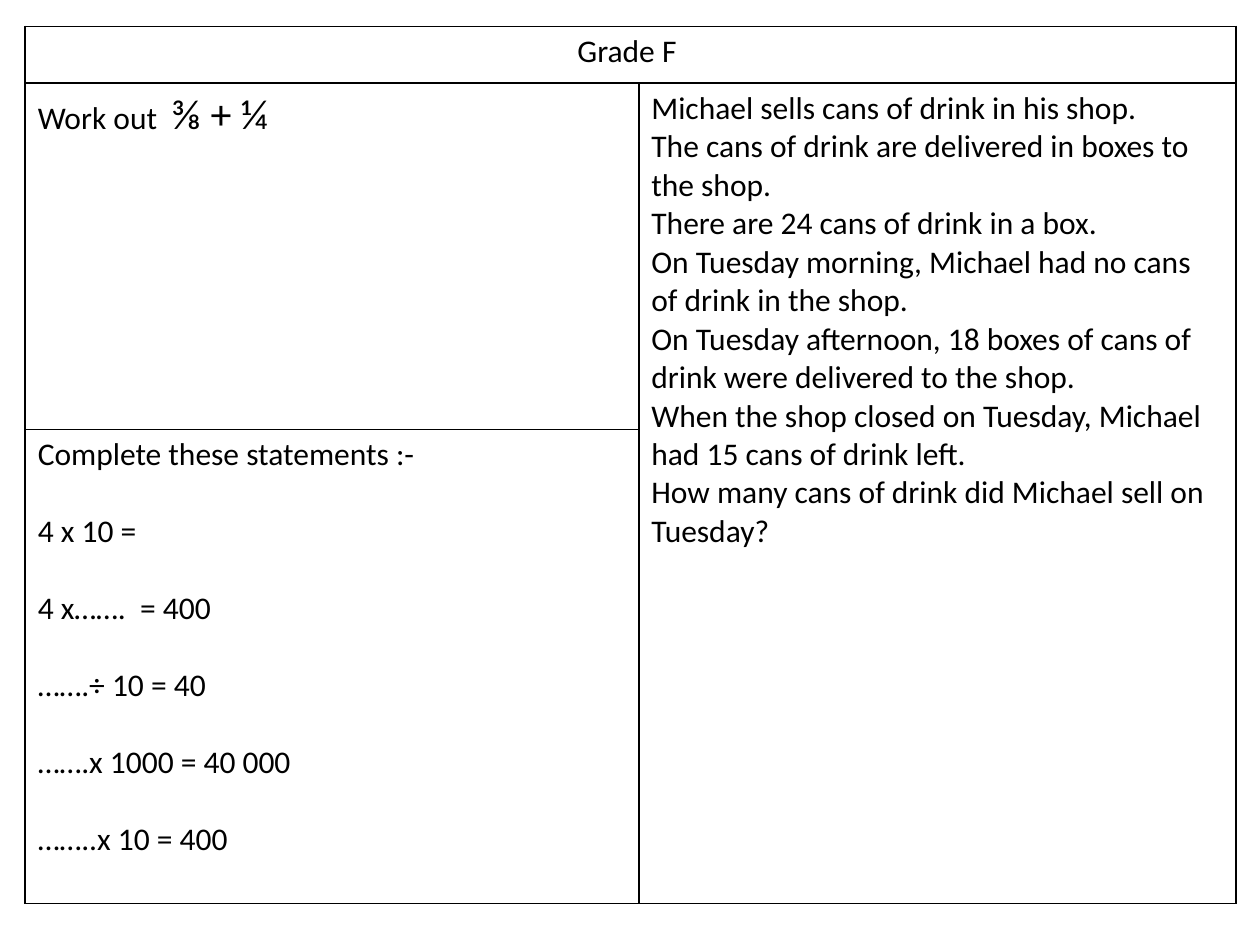
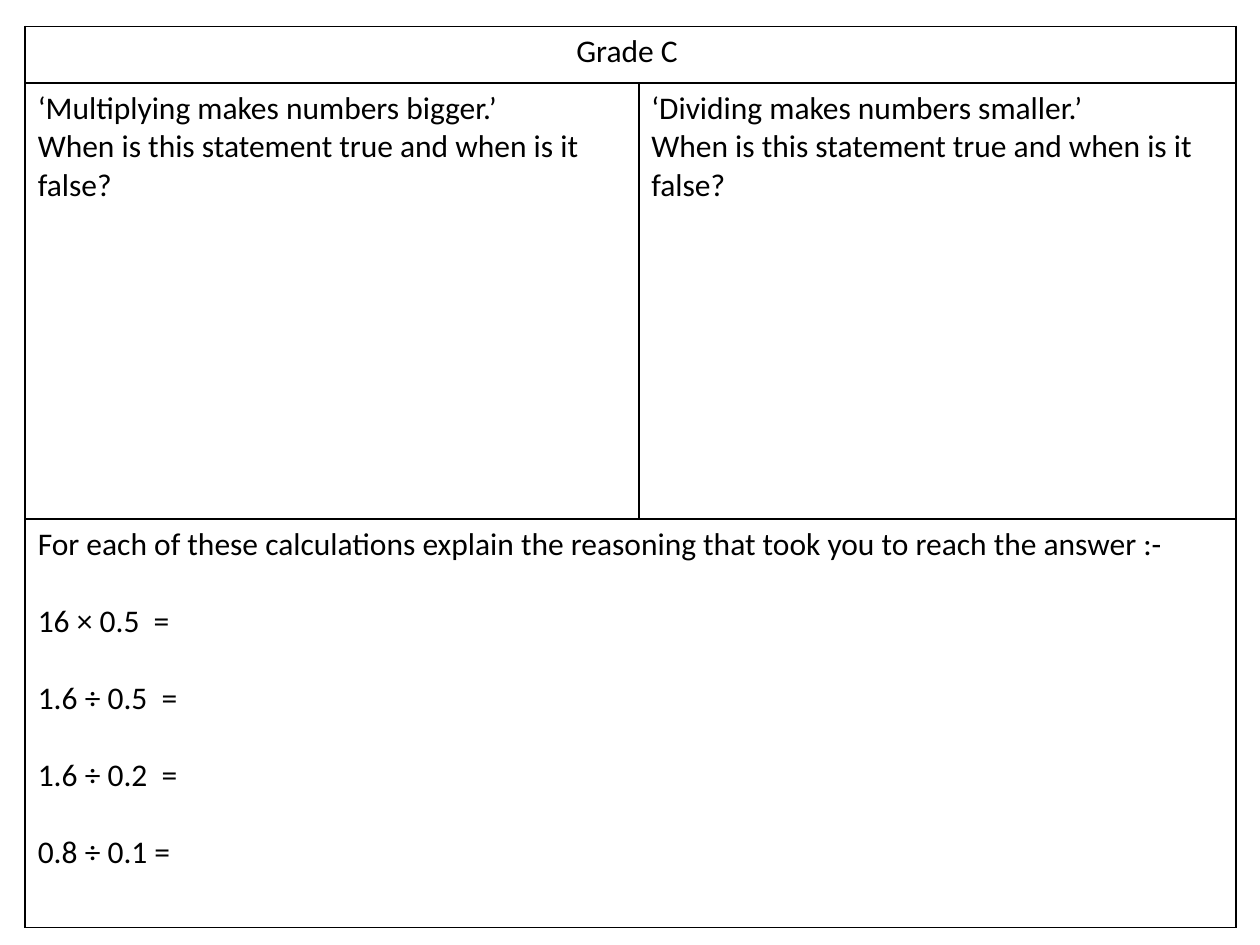
"""Build two maths question sheets, Grade F and Grade C."""
from lxml.etree import SubElement as Sub
from pptx import Presentation
from pptx.dml.color import RGBColor
from pptx.enum.text import PP_ALIGN as Align
from pptx.oxml.ns import qn
from pptx.util import Inches, Pt

BLACK = RGBColor(0, 0, 0)
FONT = "Calibri"
SIDES = ("a:lnL", "a:lnR", "a:lnT", "a:lnB")
COLS = (4.87, 4.74)


def write(cell, text, size=18, align=Align.LEFT, gap=0, join=False):
    frame = cell.text_frame
    para = frame.paragraphs[-1]
    if para.runs and not join:
        para = frame.add_paragraph()
    para.alignment = align
    para.space_before = Pt(gap)
    run = para.add_run()
    run.text = text
    run.font.name = FONT
    run.font.size = Pt(size)
    run.font.color.rgb = BLACK


def grid(slide, title, rows):
    frame = slide.shapes.add_table(
        len(rows), len(COLS), Inches(0.2), Inches(0.21),
        Inches(sum(COLS)), Inches(sum(rows)))
    table = frame.table
    table.first_row = table.horz_banding = False
    for col, width in zip(table.columns, COLS):
        col.width = Inches(width)
    for row, height in zip(table.rows, rows):
        row.height = Inches(height)
    for cell in table.iter_cells():
        props = cell._tc.get_or_add_tcPr()
        for side in SIDES:
            line = Sub(props, qn(side), w=str(Pt(1)))
            fill = Sub(line, qn("a:solidFill"))
            Sub(fill, qn("a:srgbClr"), val=str(BLACK))
        cell.fill.background()
    table.cell(0, 0).merge(table.cell(0, 1))
    write(table.cell(0, 0), title, align=Align.CENTER)
    return table


prs = Presentation()
prs.slide_width = Inches(10)
prs.slide_height = Inches(7.5)
blank = prs.slide_layouts[6]

table = grid(prs.slides.add_slide(blank), "Grade F ", (0.45, 2.75, 3.76))
table.cell(1, 1).merge(table.cell(2, 1))
write(table.cell(1, 0), "Work out  ")
write(table.cell(1, 0), "⅜ + ¼", size=24, join=True)
for text in (
    "Michael sells cans of drink in his shop.",
    "The cans of drink are delivered in boxes to the shop.",
    "There are 24 cans of drink in a box.",
    "On Tuesday morning, Michael had no cans of drink in the shop.",
    "On Tuesday afternoon, 18 boxes of cans of drink were delivered to the shop.",
    "When the shop closed on Tuesday, Michael had 15 cans of drink left.",
    "How many cans of drink did Michael sell on Tuesday?",
):
    write(table.cell(1, 1), text)
write(table.cell(2, 0), "Complete these statements :-")
for text in ("4 x 10 =", "4 x…….  = 400", "…….÷ 10 = 40",
             "…….x 1000 = 40 000", "……..x 10 = 400"):
    write(table.cell(2, 0), text, gap=22)

table = grid(prs.slides.add_slide(blank), "Grade C ", (0.45, 3.46, 3.24))
table.cell(2, 0).merge(table.cell(2, 1))
for col, claim in enumerate(("‘Multiplying makes numbers bigger.’",
                             "‘Dividing makes numbers smaller.’")):
    write(table.cell(1, col), claim)
    write(table.cell(1, col), "When is this statement true and when is it false?")
write(table.cell(2, 0), "For each of these calculations explain the reasoning "
      "that took you to reach the answer :-")
for text in ("16 × 0.5  =", "1.6 ÷ 0.5  =", "1.6 ÷ 0.2  =", "0.8 ÷ 0.1 ="):
    write(table.cell(2, 0), text, gap=22)

prs.save("out.pptx")
